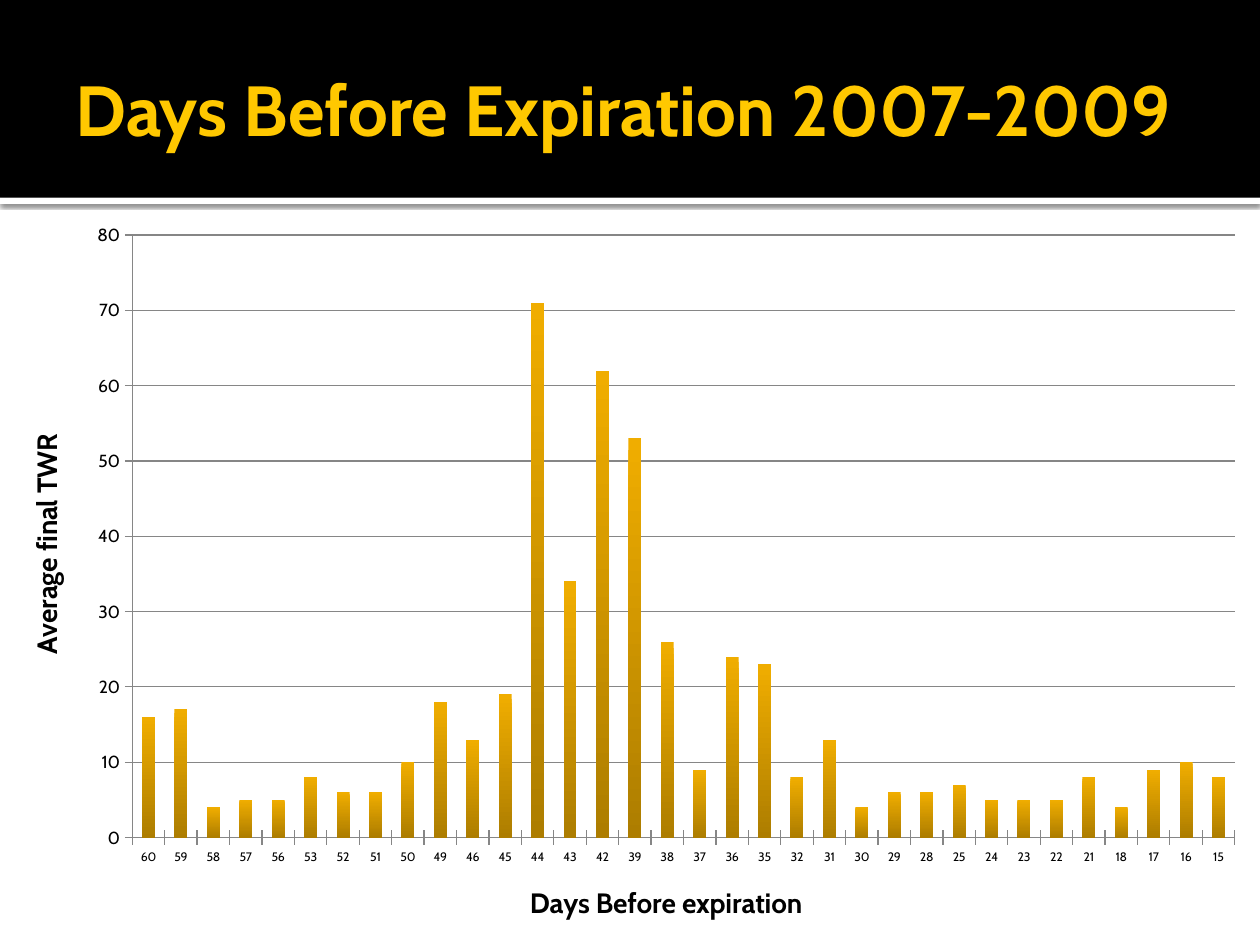
from dataclasses import dataclass

from lxml.etree import SubElement
from pptx import Presentation
from pptx.chart.data import CategoryChartData
from pptx.dml.color import RGBColor
from pptx.enum.chart import XL_CHART_TYPE, XL_TICK_MARK
from pptx.enum.shapes import MSO_SHAPE
from pptx.enum.text import MSO_ANCHOR, MSO_AUTO_SIZE, PP_ALIGN
from pptx.oxml import parse_xml
from pptx.oxml.ns import nsdecls, qn
from pptx.util import Pt


@dataclass(frozen=True)
class Theme:
    font: str = "Cabin"
    black: RGBColor = RGBColor(0, 0, 0)
    white: RGBColor = RGBColor(255, 255, 255)
    heading: RGBColor = RGBColor(0xFF, 0xC8, 0x00)
    bar_top: RGBColor = RGBColor(0xF0, 0xAD, 0x00)
    bar_bottom: RGBColor = RGBColor(0xAD, 0x7D, 0x00)
    grid: RGBColor = RGBColor(0x86, 0x86, 0x86)
    heading_size: float = 40.5
    axis_title_size: float = 16
    value_size: float = 10
    day_size: float = 7


@dataclass(frozen=True)
class Band:
    top: float
    height: float
    color: RGBColor
    shadow: bool = False


THEME = Theme()
SLIDE_WIDTH, SLIDE_HEIGHT = 720, 540
CHART_TOP = 120
BANDS = [
    Band(113, 3.6, THEME.white, shadow=True),
    Band(0, 113, THEME.black),
]
PLOT_AREA = {"x": 0.105, "y": 0.034, "w": 0.875, "h": 0.82}
RETURN_BY_DAY = {
    60: 16, 59: 17, 58: 4, 57: 5, 56: 5, 53: 8, 52: 6, 51: 6, 50: 10,
    49: 18, 46: 13, 45: 19, 44: 71, 43: 34, 42: 62, 39: 53, 38: 26,
    37: 9, 36: 24, 35: 23, 32: 8, 31: 13, 30: 4, 29: 6, 28: 6, 25: 7,
    24: 5, 23: 5, 22: 5, 21: 8, 18: 4, 17: 9, 16: 10, 15: 8,
}


def style_font(font, size: float, color: RGBColor, bold: bool) -> None:
    font.name = THEME.font
    font.size = Pt(size)
    font.color.rgb = color
    font.bold = bold


def draw_band(slide, band: Band) -> None:
    strip = slide.shapes.add_shape(
        MSO_SHAPE.RECTANGLE, Pt(0), Pt(band.top), Pt(SLIDE_WIDTH), Pt(band.height)
    )
    strip.fill.solid()
    strip.fill.fore_color.rgb = band.color
    strip.line.fill.background()
    strip.shadow.inherit = False
    if band.shadow:
        effects = strip._element.spPr.find(qn("a:effectLst"))
        effects.append(parse_xml(
            f'<a:outerShdw {nsdecls("a")} blurRad="{Pt(2.5)}" dist="{Pt(0.8)}" '
            'dir="5400000" algn="t" rotWithShape="0"><a:srgbClr val="000000">'
            '<a:alpha val="60000"/></a:srgbClr></a:outerShdw>'
        ))


def draw_heading(slide, wording: str) -> None:
    heading = slide.shapes.title
    heading.left, heading.top = Pt(36), Pt(12.24)
    heading.width, heading.height = Pt(653.76), Pt(98.64)
    frame = heading.text_frame
    frame.word_wrap = True
    frame.auto_size = MSO_AUTO_SIZE.NONE
    frame.vertical_anchor = MSO_ANCHOR.MIDDLE
    frame.margin_left = Pt(7.2)
    frame.margin_right = frame.margin_top = frame.margin_bottom = Pt(3.6)
    line = frame.paragraphs[0]
    line.alignment = PP_ALIGN.LEFT
    run = line.add_run()
    run.text = wording
    style_font(run.font, THEME.heading_size, THEME.heading, True)
    slide.shapes._spTree.append(heading._element)


def style_axis(axis, wording: str, label_size: float) -> None:
    run = axis.axis_title.text_frame.paragraphs[0].add_run()
    run.text = wording
    style_font(run.font, THEME.axis_title_size, THEME.black, True)
    style_font(axis.tick_labels.font, label_size, THEME.black, False)
    axis.major_tick_mark = XL_TICK_MARK.CROSS
    axis.minor_tick_mark = XL_TICK_MARK.NONE
    axis.format.line.color.rgb = THEME.grid
    axis.format.line.width = Pt(0.75)


def place_plot(chart) -> None:
    plot_area = chart._chartSpace.chart.plotArea
    layout = plot_area.find(qn("c:layout"))
    if layout is None:
        layout = SubElement(plot_area, qn("c:layout"))
        plot_area.insert(0, layout)
    manual = SubElement(layout, qn("c:manualLayout"))
    settings = {"layoutTarget": "inner", "xMode": "edge", "yMode": "edge", **PLOT_AREA}
    for tag, setting in settings.items():
        SubElement(manual, qn(f"c:{tag}")).set("val", str(setting))


def draw_returns(slide) -> None:
    returns = CategoryChartData()
    returns.categories = [str(day) for day in RETURN_BY_DAY]
    returns.add_series("Series 1", list(RETURN_BY_DAY.values()))
    chart = slide.shapes.add_chart(
        XL_CHART_TYPE.COLUMN_CLUSTERED, Pt(0), Pt(CHART_TOP),
        Pt(SLIDE_WIDTH), Pt(SLIDE_HEIGHT - CHART_TOP), returns,
    ).chart
    chart.has_legend = False
    chart.has_title = False
    style_font(chart.font, THEME.value_size, THEME.black, False)
    place_plot(chart)

    style_axis(chart.category_axis, "Days Before expiration", THEME.day_size)
    style_axis(chart.value_axis, "Average final TWR", THEME.value_size)
    chart.value_axis.minimum_scale = 0
    chart.value_axis.maximum_scale = 80
    chart.value_axis.major_unit = 10
    gridlines = chart.value_axis.major_gridlines.format.line
    gridlines.color.rgb = THEME.grid
    gridlines.width = Pt(0.75)

    plot = chart.plots[0]
    plot.gap_width = 150
    plot.vary_by_categories = False
    bar_fill = plot.series[0].format.fill
    bar_fill.gradient()
    bar_fill.gradient_angle = 270
    for stop, color in zip(bar_fill.gradient_stops, (THEME.bar_top, THEME.bar_bottom)):
        stop.color.rgb = color


def main() -> None:
    presentation = Presentation()
    presentation.slide_width = Pt(SLIDE_WIDTH)
    presentation.slide_height = Pt(SLIDE_HEIGHT)
    slide = presentation.slides.add_slide(presentation.slide_layouts[5])
    slide.background.fill.solid()
    slide.background.fill.fore_color.rgb = THEME.white
    for band in BANDS:
        draw_band(slide, band)
    draw_heading(slide, "Days Before Expiration 2007-2009")
    draw_returns(slide)
    presentation.save("out.pptx")


if __name__ == "__main__":
    main()
